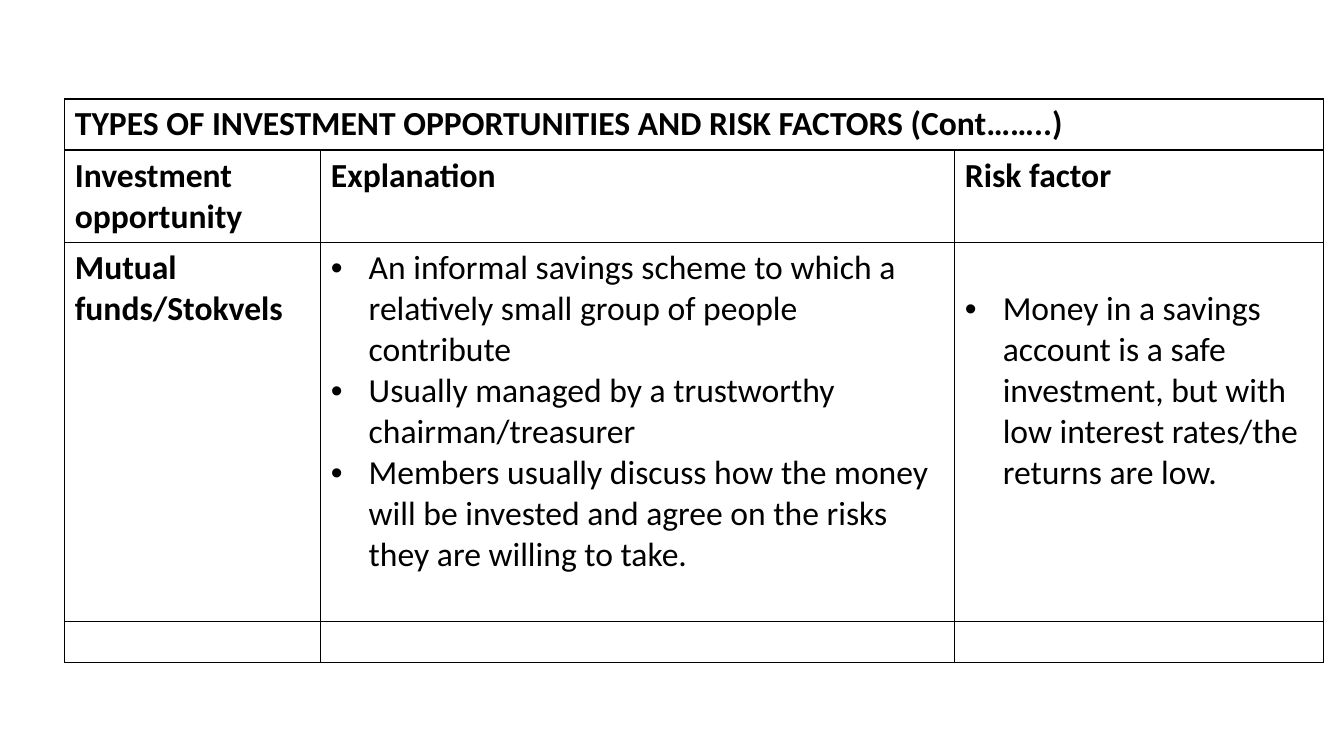
"""Build a slide with a bordered table of investment opportunities and risks."""
from lxml import etree
from pptx import Presentation
from pptx.dml.color import RGBColor
from pptx.oxml import ns
from pptx.util import Pt

TITLE = "TYPES OF INVESTMENT OPPORTUNITIES AND RISK FACTORS (Cont……..)"
HEADINGS = ["Investment opportunity", "Explanation", "Risk factor"]
OPPORTUNITY = "Mutual funds/Stokvels"
EXPLANATION = [
    "An informal savings scheme to which a relatively small group of people contribute",
    "Usually managed by a trustworthy chairman/treasurer",
    "Members usually discuss how the money will be invested and agree on the risks "
    "they are willing to take.",
]
RISK = [
    "Money in a savings account is a safe investment, but with low interest rates/the "
    "returns are low.",
]

THEME = {"font": "Calibri", "size": 24, "ink": "000000", "paper": "FFFFFF", "border": 1}
SLIDE_SIZE = (960, 540)
LEFT, TOP = 46.3, 70.7
COLUMN_WIDTHS = [182.9, 452.9, 263.5]
ROW_HEIGHTS = [36.5, 65.8, 270.7, 29.3]
BULLET_INDENT = 27
RISK_TOP_MARGIN = 32.9


def style_cell(cell):
    properties = cell._tc.get_or_add_tcPr()
    for side in ("lnL", "lnR", "lnT", "lnB"):
        border = etree.SubElement(properties, ns.qn("a:" + side), w=str(Pt(THEME["border"])))
        fill = etree.SubElement(border, ns.qn("a:solidFill"))
        etree.SubElement(fill, ns.qn("a:srgbClr"), val=THEME["ink"])
    cell.fill.solid()
    cell.fill.fore_color.rgb = RGBColor.from_string(THEME["paper"])


def write(cell, lines, bold=False, bulleted=False):
    cell.text_frame.text = "\n".join(lines)
    for paragraph in cell.text_frame.paragraphs:
        if bulleted:
            properties = paragraph._p.get_or_add_pPr()
            properties.set("marL", str(Pt(BULLET_INDENT)))
            properties.set("indent", str(-Pt(BULLET_INDENT)))
            etree.SubElement(properties, ns.qn("a:buFont"), typeface="Arial")
            etree.SubElement(properties, ns.qn("a:buChar"), char="•")
        for run in paragraph.runs:
            run.font.name = THEME["font"]
            run.font.size = Pt(THEME["size"])
            run.font.bold = bold
            run.font.color.rgb = RGBColor.from_string(THEME["ink"])


def main():
    deck = Presentation()
    deck.slide_width, deck.slide_height = map(Pt, SLIDE_SIZE)
    slide = deck.slides.add_slide(deck.slide_layouts[6])
    investments = slide.shapes.add_table(
        len(ROW_HEIGHTS), len(COLUMN_WIDTHS), Pt(LEFT), Pt(TOP),
        Pt(sum(COLUMN_WIDTHS)), Pt(sum(ROW_HEIGHTS))).table
    investments.first_row = investments.horz_banding = False
    for column, width in zip(investments.columns, COLUMN_WIDTHS):
        column.width = Pt(width)
    for row, height in zip(investments.rows, ROW_HEIGHTS):
        row.height = Pt(height)
    for cell in investments.iter_cells():
        style_cell(cell)

    title = investments.cell(0, 0)
    title.merge(investments.cell(0, len(COLUMN_WIDTHS) - 1))
    write(title, [TITLE], bold=True)
    for index, heading in enumerate(HEADINGS):
        write(investments.cell(1, index), [heading], bold=True)
    write(investments.cell(2, 0), [OPPORTUNITY], bold=True)
    write(investments.cell(2, 1), EXPLANATION, bulleted=True)
    write(investments.cell(2, 2), RISK, bulleted=True)
    investments.cell(2, 2).margin_top = Pt(RISK_TOP_MARGIN)
    deck.save("out.pptx")


if __name__ == "__main__":
    main()
